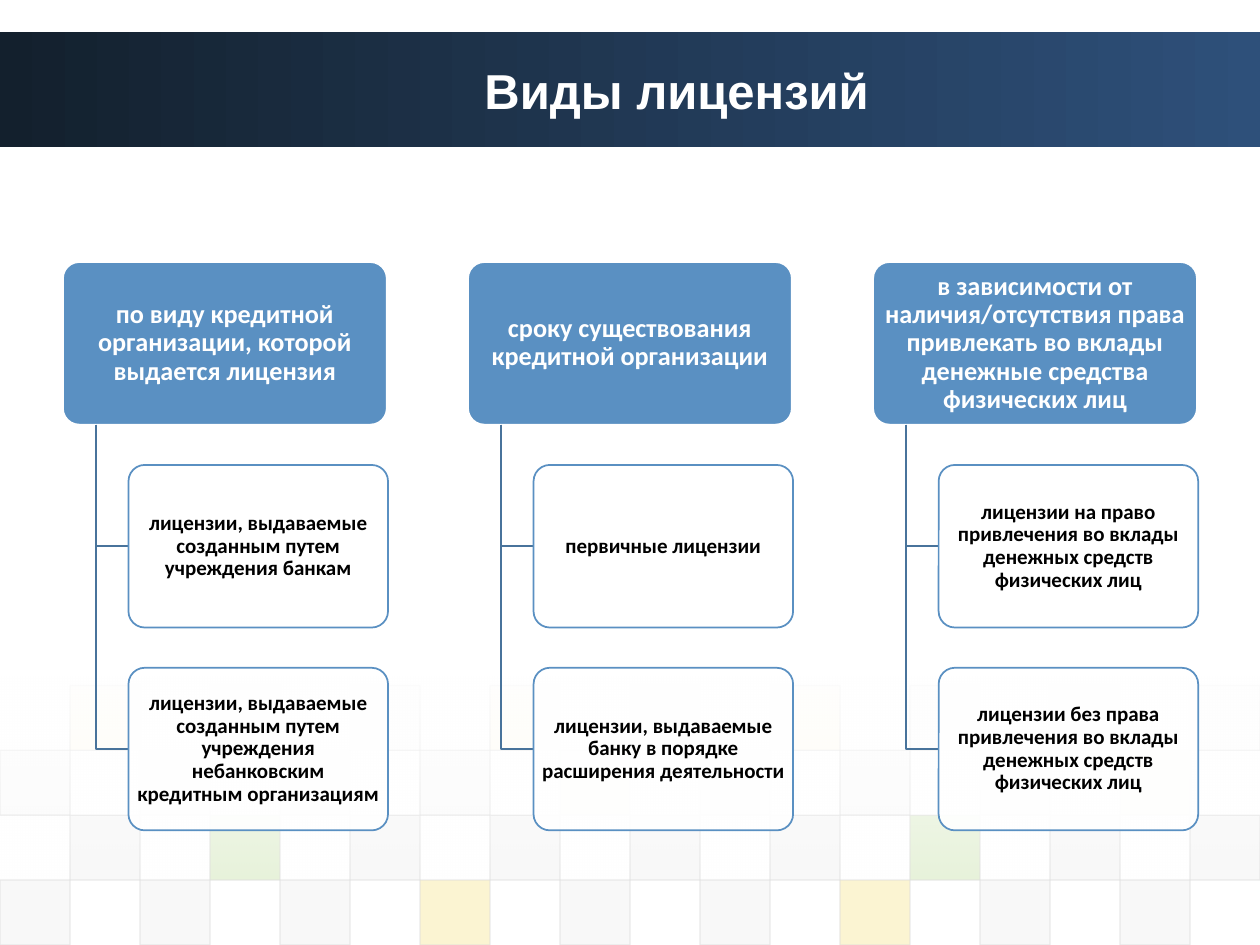
from lxml import etree
from pptx import Presentation
from pptx.dml.color import RGBColor
from pptx.enum.shapes import MSO_SHAPE
from pptx.enum.text import MSO_ANCHOR, PP_ALIGN
from pptx.oxml.ns import qn
from pptx.util import Inches, Pt

RECTANGLE, ROUNDED = MSO_SHAPE.RECTANGLE, MSO_SHAPE.ROUNDED_RECTANGLE
MIDDLE, CENTER = MSO_ANCHOR.MIDDLE, PP_ALIGN.CENTER

WIDTH, HEIGHT = 10, 7.5
COLORS = {
    "navy": "13202D", "steel": "2E507A", "white": "FFFFFF", "black": "000000",
    "header": "5A90C2", "branch": "48739B",
    "D": "DDDDDD", "E": "EAEAEA", "G": "8AC246", "Y": "EFC821",
}
TILE_COLUMNS, TILE_HEIGHT, TILES_TOP = 18, 0.515, 5.44
TILE_ROWS = [
    (".Y.E.E.Y.D.Y.E.G.E", 5),
    ("D.D.D.D.G.D.D.D.Y.", 10),
    (".D.G.D.D.D.D.G.D.D", 20),
    ("D.D.D.Y.D.D.Y.D.D.", 20),
]
TREE_LEFT, TREE_TOP = 0.5, 2.08
COLUMN_STEP, ROW_STEP = 3.215, 1.61
HEADER_WIDTH, CHILD_WIDTH, BOX_HEIGHT = 2.57, 2.06, 1.29
INDENT = 0.26
GROUPS = [
    ("по виду кредитной организации, которой выдается лицензия",
     ["лицензии, выдаваемые созданным путем учреждения банкам",
      "лицензии, выдаваемые созданным путем учреждения небанковским кредитным организациям"]),
    ("сроку существования кредитной организации",
     ["первичные лицензии",
      "лицензии, выдаваемые банку в порядке расширения деятельности"]),
    ("в зависимости от наличия/отсутствия права привлекать во вклады денежные средства физических лиц",
     ["лицензии на право привлечения во вклады денежных средств физических лиц",
      "лицензии без права привлечения во вклады денежных средств физических лиц"]),
]


def color(name):
    """Return the named colour."""
    return RGBColor.from_string(COLORS[name])


def set_alpha(color_node, percent):
    """Give a colour element an opacity in percent."""
    etree.SubElement(color_node, qn("a:alpha")).set("val", str(percent * 1000))


def add_box(slide, kind, left, top, width, height, fill=None, opacity=100, line=None, weight=1):
    """Add a shape with an optional solid fill and outline."""
    box = slide.shapes.add_shape(kind, Inches(left), Inches(top), Inches(width), Inches(height))
    box.shadow.inherit = False
    if fill:
        box.fill.solid()
        box.fill.fore_color.rgb = color(fill)
        set_alpha(box.element.spPr.find(".//" + qn("a:srgbClr")), opacity)
    if line:
        box.line.color.rgb = color(line)
        box.line.width = Pt(weight)
    else:
        box.line.fill.background()
    return box


def add_gradient(slide, top, height, angle, names, opacities):
    """Add a full-width band with a two-stop gradient."""
    band = add_box(slide, RECTANGLE, 0, top, WIDTH, height)
    band.fill.gradient()
    band.fill.gradient_angle = angle
    for stop, name in zip(band.fill.gradient_stops, names):
        stop.color.rgb = color(name)
    for node, opacity in zip(band.element.spPr.iter(qn("a:srgbClr")), opacities):
        set_alpha(node, opacity)


def write_text(box, text, size, font, name):
    """Write one bold centred paragraph into a box."""
    frame = box.text_frame
    frame.word_wrap = True
    frame.vertical_anchor = MIDDLE
    para = frame.paragraphs[0]
    para.alignment = CENTER
    span = para.add_run()
    span.text = text
    span.font.size = Pt(size)
    span.font.name = font
    span.font.bold = True
    span.font.color.rgb = color(name)


def add_mosaic(slide):
    """Add the checkered tiles and the white fade over them."""
    tile_width = WIDTH / TILE_COLUMNS
    for row, (pattern, opacity) in enumerate(TILE_ROWS):
        for column, tint in enumerate(pattern):
            if tint != ".":
                tile = add_box(slide, RECTANGLE, column * tile_width, TILES_TOP + row * TILE_HEIGHT,
                               tile_width, TILE_HEIGHT, tint, opacity, "D", 0.75)
                set_alpha(tile.line._ln.find(".//" + qn("a:srgbClr")), 60)
    add_gradient(slide, 5.37, 1.62, 270, ("white", "white"), (90, 0))


def add_card(slide, left, top, width, text, size, fill, opacity, line, ink):
    """Add a rounded card with its text."""
    card = add_box(slide, ROUNDED, left, top, width, BOX_HEIGHT, fill, opacity, line)
    card.adjustments[0] = 0.1
    frame = card.text_frame
    frame.margin_left = frame.margin_right = Inches(0.03)
    frame.margin_top = frame.margin_bottom = Inches(0.02)
    write_text(card, text, size, "Calibri", ink)
    frame.paragraphs[0].line_spacing = 0.9


def add_branch(slide, left, top, bottom):
    """Add an elbow line from a header down to a child card."""
    start, end = Inches(left), Inches(left + INDENT)
    builder = slide.shapes.build_freeform(start, Inches(top))
    builder.add_line_segments([(start, Inches(bottom)), (end, Inches(bottom))], close=False)
    branch = builder.convert_to_shape()
    branch.shadow.inherit = False
    branch.fill.background()
    branch.line.color.rgb = color("branch")
    branch.line.width = Pt(1)


def add_group(slide, column, header, children):
    """Add a header card with its child cards below."""
    left = TREE_LEFT + column * COLUMN_STEP
    add_card(slide, left, TREE_TOP, HEADER_WIDTH, header, 15, "header", 100, "white", "white")
    for row, text in enumerate(children, start=1):
        top = TREE_TOP + row * ROW_STEP
        add_branch(slide, left + INDENT, TREE_TOP + BOX_HEIGHT, top + BOX_HEIGHT / 2)
        add_card(slide, left + 2 * INDENT, top, CHILD_WIDTH, text, 12, "white", 90, "header", "black")


def main():
    """Build the slide and save it."""
    deck = Presentation()
    deck.slide_width, deck.slide_height = Inches(WIDTH), Inches(HEIGHT)
    slide = deck.slides.add_slide(deck.slide_layouts[6])
    add_gradient(slide, 0.25, 0.92, 0, ("navy", "steel"), (100, 100))
    add_mosaic(slide)
    title = slide.shapes.add_textbox(Inches(1.33), Inches(0.25), Inches(8.08), Inches(0.92))
    write_text(title, "Виды лицензий", 28, "Arial", "white")
    for column, (header, children) in enumerate(GROUPS):
        add_group(slide, column, header, children)
    deck.save("out.pptx")


if __name__ == "__main__":
    main()
